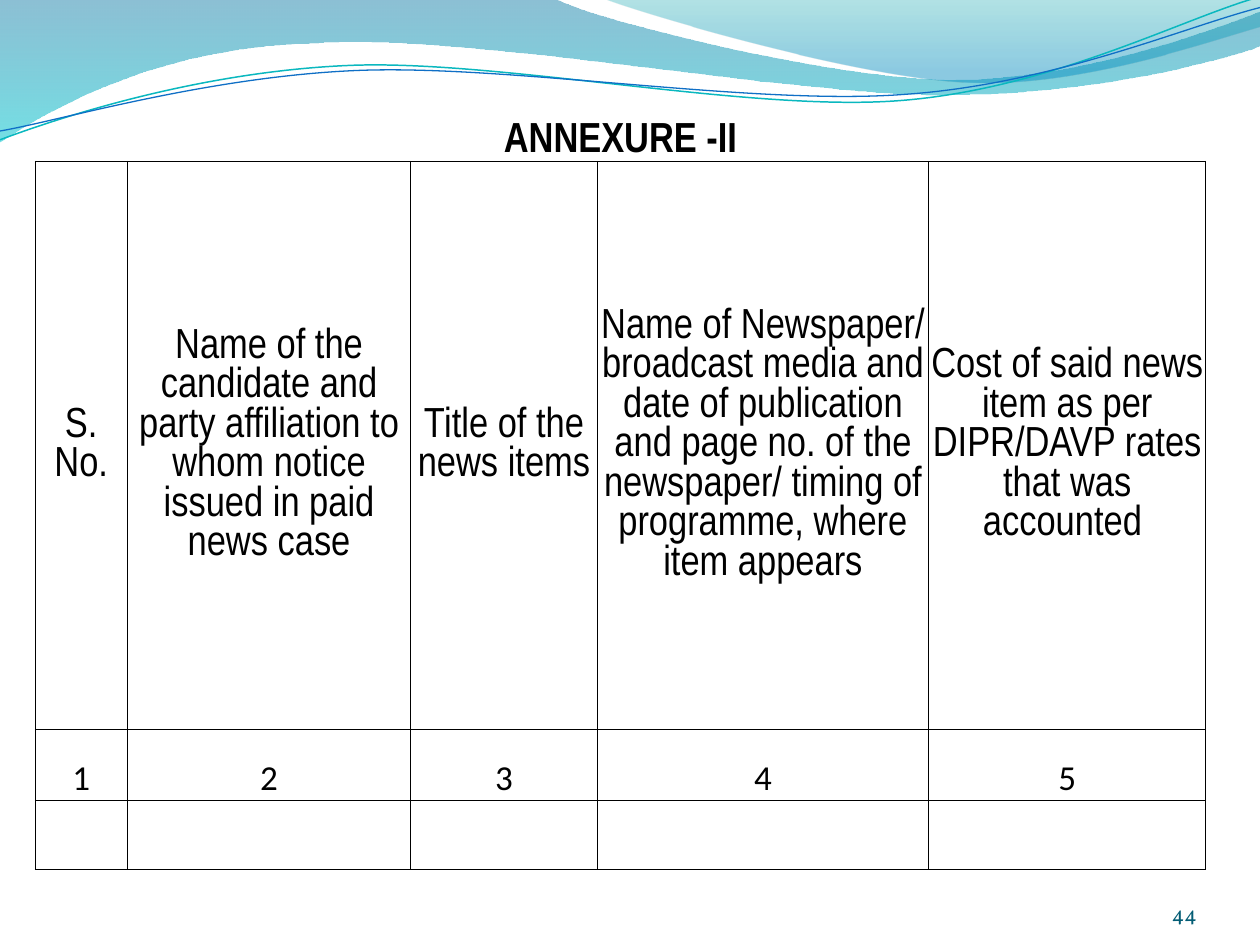
from lxml import etree
from pptx import Presentation
from pptx.dml.color import RGBColor
from pptx.enum.text import MSO_ANCHOR, PP_ALIGN
from pptx.oxml.ns import qn
from pptx.util import Inches, Pt

CENTER, RIGHT = PP_ALIGN.CENTER, PP_ALIGN.RIGHT
MIDDLE, BOTTOM = MSO_ANCHOR.MIDDLE, MSO_ANCHOR.BOTTOM

BLACK = RGBColor(0x00, 0x00, 0x00)
DEEP_TEAL = RGBColor(0x04, 0x5D, 0x75)
TEAL_LINE = RGBColor(0x0A, 0xB8, 0xBF)
BLUE_LINE = RGBColor(0x0F, 0x6F, 0xC6)
WAVE_TOP = RGBColor(0x00, 0x74, 0xA1)
WAVE_BOTTOM = RGBColor(0x00, 0xC6, 0xCF)
CREST_TOP = RGBColor(0x00, 0xA1, 0xA9)
CREST_BOTTOM = RGBColor(0x00, 0x8B, 0xBF)

COLUMN_WIDTHS = [0.73, 2.25, 1.48, 2.63, 2.2]
ROW_HEIGHTS = [0.6, 4.51, 0.56, 0.55]
TITLE = "ANNEXURE -II"
HEADINGS = [
    "S. No.",
    "Name of the candidate and party affiliation to whom notice issued in paid news case",
    "Title of the news items",
    "Name of Newspaper/ broadcast media and date of publication and page no. of the "
    "newspaper/ timing of programme, where item appears",
    "Cost of said news item as per DIPR/DAVP rates that was accounted ",
]
HEADING_FONT = {"name": "Arial Narrow", "size": Pt(24), "bold": False}
TITLE_FONT = {**HEADING_FONT, "bold": True}
NUMBER_FONT = {"name": "Calibri", "size": Pt(20), "bold": False}
PAGE_FONT = {"name": "Vollkorn", "size": Pt(12)}

# Outlines in inches: one point is a corner, three points are a Bezier segment.
WAVE = [
    [(0, 0)], [(4.4, -0.01)],
    [(4.76, 0.17), (6.64, 0.63), (7.58, 0.63)],
    [(8.53, 0.63), (9.58, 0.26), (10, 0.09)],
    [(10.01, 0.36)],
    [(9.83, 0.44), (8.7, 0.76), (7.46, 0.75)],
    [(6.22, 0.75), (3.82, 0.28), (2.57, 0.34)],
    [(1.29, 0.36), (0.46, 0.83), (-0.01, 1.13)],
    [(0, 0)],
]
CREST = [
    [(4.79, -0.01)],
    [(5.09, 0.11), (6.82, 0.62), (7.69, 0.65)],
    [(8.56, 0.69), (9.61, 0.32), (10, 0.21)],
    [(10, 0)], [(4.79, -0.01)],
]
TEAL_CURVE = [
    [(0, 1.11)],
    [(0.48, 0.93), (1.58, 0.57), (2.77, 0.52)],
    [(3.95, 0.47), (5.93, 0.89), (7.13, 0.8)],
    [(8.33, 0.71), (9.38, 0.15), (9.98, -0.02)],
]
BLUE_CURVE = [
    [(0, 1.04)],
    [(0.47, 0.96), (1.64, 0.61), (2.83, 0.56)],
    [(4.03, 0.51), (5.97, 0.84), (7.17, 0.75)],
    [(8.36, 0.67), (9.41, 0.21), (10, 0.06)],
]


def add_outline(slide, outline, close):
    """Build a freeform, then join each three-point segment into one Bezier curve."""
    start, *rest = [(Inches(x), Inches(y)) for segment in outline for x, y in segment]
    builder = slide.shapes.build_freeform(*start, scale=1.0)
    builder.add_line_segments(rest, close=close)
    shape = builder.convert_to_shape()
    shape.shadow.inherit = False

    lines = iter(list(shape.element.iter(qn("a:lnTo"))))
    for segment in outline[1:]:
        first, *others = [next(lines) for _ in segment]
        if others:
            first.addprevious(curve := etree.Element(qn("a:cubicBezTo")))
            for line in (first, *others):
                curve.append(line[0])
                line.getparent().remove(line)
    return shape


def add_wave(slide, outline, stops):
    """Add a filled wave; each stop is position, colour and opacity in percent."""
    shape = add_outline(slide, outline, close=True)
    shape.line.fill.background()
    shape.fill.gradient()
    shape.fill.gradient_angle = 270
    for stop, (position, color, _) in zip(shape.fill.gradient_stops, stops):
        stop.position = position
        stop.color.rgb = color
    color_elements = shape.element.spPr.iter(qn("a:srgbClr"))
    for color_element, (_, _, opacity) in zip(color_elements, stops):
        etree.SubElement(color_element, qn("a:alpha"), val=str(opacity * 1000))


def add_curve(slide, outline, color, width):
    shape = add_outline(slide, outline, close=False)
    shape.fill.background()
    shape.line.color.rgb = color
    shape.line.width = Pt(width)


def write(text_frame, text, alignment, font, color):
    paragraph = text_frame.paragraphs[0]
    paragraph.alignment = alignment
    run = paragraph.add_run()
    run.text = text
    run.font.color.rgb = color
    for name, value in font.items():
        setattr(run.font, name, value)


def set_borders(cell, visible_sides):
    properties = cell._tc.get_or_add_tcPr()
    for index, side in enumerate("LRTB"):
        line = etree.Element(qn(f"a:ln{side}"), w=str(Pt(0.5)))
        if side in visible_sides:
            fill = etree.SubElement(line, qn("a:solidFill"))
            etree.SubElement(fill, qn("a:srgbClr"), val=str(BLACK))
        else:
            etree.SubElement(line, qn("a:noFill"))
        properties.insert(index, line)


def add_annexure_table(slide):
    frame = slide.shapes.add_table(
        len(ROW_HEIGHTS), len(COLUMN_WIDTHS), Inches(0.28), Inches(0.68),
        Inches(sum(COLUMN_WIDTHS)), Inches(sum(ROW_HEIGHTS)))
    table = frame.table
    table.first_row = table.horz_banding = False
    for column, width in zip(table.columns, COLUMN_WIDTHS):
        column.width = Inches(width)
    for row, height in zip(table.rows, ROW_HEIGHTS):
        row.height = Inches(height)
    table.cell(0, 0).merge(table.cell(0, len(COLUMN_WIDTHS) - 1))

    numbers = [str(number) for number in range(1, len(HEADINGS) + 1)]
    contents = [
        ([TITLE], TITLE_FONT, BOTTOM),
        (HEADINGS, HEADING_FONT, MIDDLE),
        (numbers, NUMBER_FONT, BOTTOM),
    ]
    for row_index, row in enumerate(table.rows):
        for cell in row.cells:
            cell.fill.background()
            set_borders(cell, "LRTB" if row_index else "B")
    for row, (texts, font, anchor) in zip(table.rows, contents):
        for cell, text in zip(row.cells, texts):
            cell.margin_left = cell.margin_right = cell.margin_top = Inches(0.01)
            cell.margin_bottom = 0
            cell.vertical_anchor = anchor
            write(cell.text_frame, text, CENTER, font, BLACK)


def add_page_number(slide, number):
    box = slide.shapes.add_textbox(Inches(8.67), Inches(6.95), Inches(0.83), Inches(0.4))
    frame = box.text_frame
    frame.word_wrap = True
    frame.vertical_anchor = BOTTOM
    for side in ("left", "right", "top", "bottom"):
        setattr(frame, f"margin_{side}", 0)
    write(frame, number, RIGHT, PAGE_FONT, DEEP_TEAL)


def main():
    presentation = Presentation()
    presentation.slide_width = Inches(10)
    presentation.slide_height = Inches(7.5)
    slide = presentation.slides.add_slide(presentation.slide_layouts[6])

    add_wave(slide, WAVE, [(0, WAVE_TOP, 45), (1, WAVE_BOTTOM, 55)])
    add_wave(slide, CREST, [(0, CREST_TOP, 30), (0.8, CREST_BOTTOM, 45)])
    add_curve(slide, TEAL_CURVE, TEAL_LINE, 0.85)
    add_curve(slide, BLUE_CURVE, BLUE_LINE, 0.75)
    add_page_number(slide, "44")
    add_annexure_table(slide)
    presentation.save("out.pptx")


if __name__ == "__main__":
    main()
